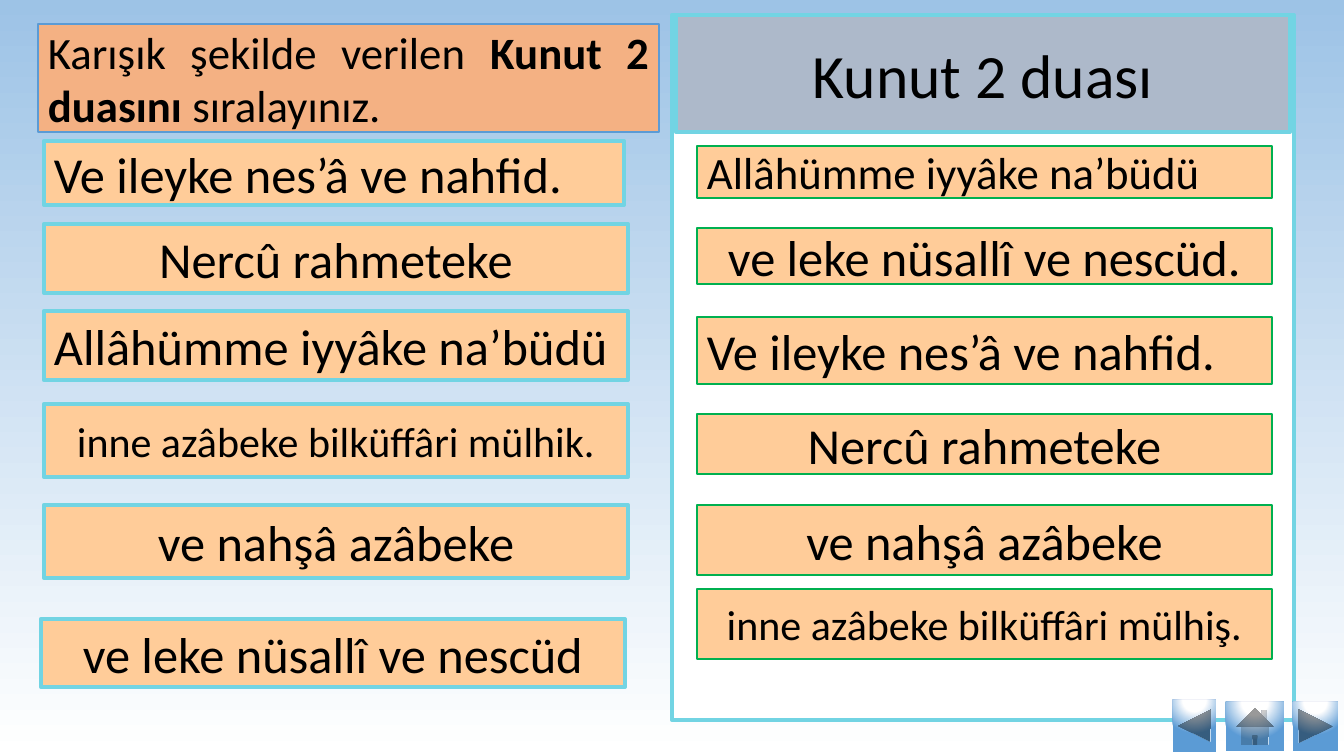
"""Build the Kunut 2 prayer ordering slide."""
from pptx import Presentation
from pptx.dml.color import RGBColor
from pptx.enum.shapes import MSO_SHAPE
from pptx.enum.text import MSO_ANCHOR, PP_ALIGN
from pptx.oxml import parse_xml
from pptx.oxml.ns import nsdecls
from pptx.util import Pt

PX = 914400 / 100.8
COLORS = {
    "white": "FFFFFF", "black": "000000", "sky": "9DC3E6", "blue": "5B9BD5",
    "cyan": "72D4E3", "green": "00B050", "peach": "FFCC99",
    "orange": "F4B183", "slate": "ADB9CA",
}
LEFT, CENTER = PP_ALIGN.LEFT, PP_ALIGN.CENTER


def style(sp, box, fill, line, width):
    sp.left, sp.top, sp.width, sp.height = [round(v * PX) for v in box]
    sp.fill.solid()
    sp.fill.fore_color.rgb = RGBColor.from_string(COLORS[fill])
    sp.line.color.rgb = RGBColor.from_string(COLORS[line])
    sp.line.width = Pt(width)
    sp.shadow.inherit = False
    return sp


def write(sp, runs, size, align):
    tf = sp.text_frame
    tf.word_wrap = True
    tf.vertical_anchor = MSO_ANCHOR.MIDDLE
    p = tf.paragraphs[0]
    p.alignment = align
    p.font.name, p.font.size = "Calibri", Pt(size)
    p.font.color.rgb = RGBColor.from_string(COLORS["black"])
    for text, bold in runs:
        r = p.add_run()
        r.text = text
        if bold:
            r.font.bold = True


prs = Presentation()
prs.slide_width, prs.slide_height = round(1344 * PX), round(756 * PX)
s = prs.slides.add_slide(prs.slide_layouts[5])

bg = s.background.fill
bg.gradient()
bg.gradient_angle = 90
for stop, name in zip(bg.gradient_stops, ("white", "sky")):
    stop.color.rgb = RGBColor.from_string(COLORS[name])

panel = s.shapes.add_shape(MSO_SHAPE.RECTANGLE, 0, 0, 0, 0)
style(panel, (672, 15, 622, 705), "white", "cyan", 3)

title = style(s.shapes.title, (676, 15, 614, 117), "slate", "cyan", 3)
write(title, [("Kunut 2 duası", False)], 44, CENTER)
panel._element.addnext(title._element)

task = s.shapes.add_shape(MSO_SHAPE.RECTANGLE, 0, 0, 0, 0)
style(task, (38, 24, 621, 108), "orange", "blue", 1)
write(task, [("Karışık şekilde verilen ", False), ("Kunut 2 duasını ", True),
             ("sıralayınız.", False)], 32, PP_ALIGN.JUSTIFY)

mixed = [
    (44, 141, 580, 64, 3, "Ve ileyke nes’â ve nahfid.", 36, LEFT),
    (44, 224, 584, 69, 3, "Nercû rahmeteke", 36, CENTER),
    (44, 311, 584, 69, 3, "Allâhümme iyyâke na’büdü", 36, LEFT),
    (44, 404, 584, 73, 3, "inne azâbeke bilküffâri mülhik.", 30, CENTER),
    (44, 505, 584, 73, 3, "ve nahşâ azâbeke", 36, CENTER),
    (41, 619, 584, 68, 3, "ve leke nüsallî ve nescüd", 36, CENTER),
]
ordered = [
    (697, 146, 575, 52, 1.5, "Allâhümme iyyâke na’büdü", 32, LEFT),
    (697, 228, 575, 56, 1.5, "ve leke nüsallî ve nescüd.", 36, CENTER),
    (697, 317, 575, 67, 1.5, "Ve ileyke nes’â ve nahfid.", 36, LEFT),
    (697, 414, 575, 60, 1, "Nercû rahmeteke", 36, CENTER),
    (697, 505, 575, 70, 1, "ve nahşâ azâbeke", 36, CENTER),
    (697, 589, 575, 70, 1, "inne azâbeke bilküffâri mülhiş.", 30, CENTER),
]
for verses, line in ((mixed, "cyan"), (ordered, "green")):
    for x, y, w, h, width, text, size, align in verses:
        sp = s.shapes.add_shape(MSO_SHAPE.RECTANGLE, 0, 0, 0, 0)
        style(sp, (x, y, w, h), "peach", line, width)
        write(sp, [(text, False)], size, align)

stops = "".join(
    f'<a:gs pos="{pos}"><a:srgbClr val="{COLORS[name]}"/></a:gs>'
    for pos, name in ((0, "white"), (35000, "white"), (100000, "blue")))
glow = (f'<a:gradFill {nsdecls("a")}><a:gsLst>{stops}</a:gsLst>'
        '<a:path path="circle"><a:fillToRect l="50000" t="-80000" '
        'r="50000" b="180000"/></a:path></a:gradFill>')
buttons = [
    (MSO_SHAPE.ACTION_BUTTON_BACK_OR_PREVIOUS, 1173, 700, 43, 52),
    (MSO_SHAPE.ACTION_BUTTON_HOME, 1226, 702, 58, 49),
    (MSO_SHAPE.ACTION_BUTTON_FORWARD_OR_NEXT, 1293, 702, 45, 49),
]
for kind, *box in buttons:
    sp = s.shapes.add_shape(kind, *[round(v * PX) for v in box])
    sp.shadow.inherit = False
    sp.line.fill.background()
    sp._element.spPr.prstGeom.addnext(parse_xml(glow))

prs.save("out.pptx")
